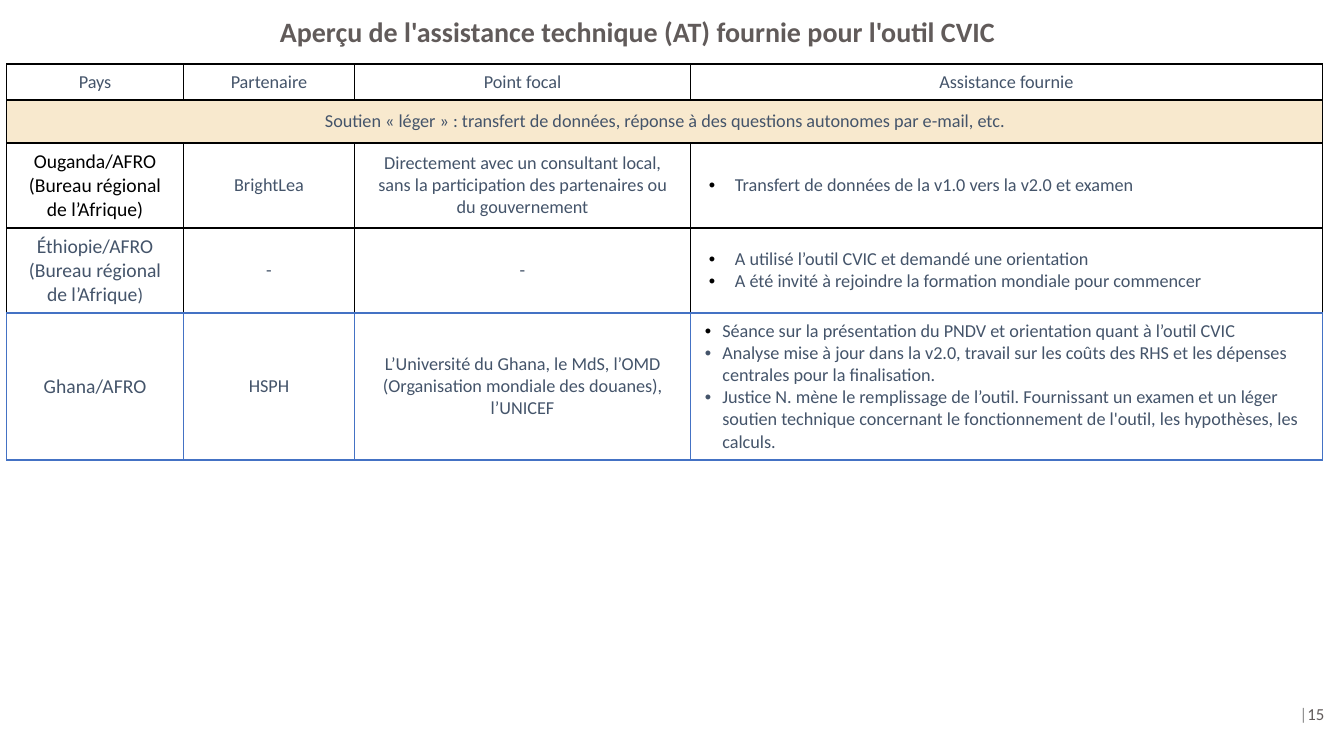
from lxml import etree
from pptx import Presentation
from pptx.dml.color import RGBColor
from pptx.enum.text import MSO_ANCHOR, PP_ALIGN
from pptx.oxml.ns import qn
from pptx.util import Pt

LEFT, MID, RIGHT = PP_ALIGN.LEFT, PP_ALIGN.CENTER, PP_ALIGN.RIGHT
MIDDLE = MSO_ANCHOR.MIDDLE
BLACK = RGBColor(0x00, 0x00, 0x00)
SLATE = RGBColor(0x44, 0x54, 0x6A)
BROWN = RGBColor(0x61, 0x5B, 0x5A)
GREY = RGBColor(0x8C, 0x8C, 0x8C)
BLUE = RGBColor(0x44, 0x72, 0xC4)
AMBER = RGBColor(0xDF, 0x93, 0x0A)

WIDTHS = [126, 122.4, 239.8, 451.4]
HEIGHTS = [25.7, 30.8, 60.7, 60.7, 105]
HEADS = ["Pays", "Partenaire", "Point focal", "Assistance fournie"]
BAND = ("Soutien « léger » : transfert de données, réponse à des questions "
        "autonomes par e-mail, etc.")
ROWS = [
    ["Ouganda/AFRO (Bureau régional de l’Afrique)", "BrightLea",
     "Directement avec un consultant local, sans la participation des "
     "partenaires ou du gouvernement",
     ["Transfert de données de la v1.0 vers la v2.0 et examen"]],
    ["Éthiopie/AFRO (Bureau régional de l’Afrique", "-", "-",
     ["A utilisé l’outil CVIC et demandé une orientation",
      "A été invité à rejoindre la formation mondiale pour commencer"]],
    ["Ghana/AFRO", "HSPH",
     "L’Université du Ghana, le MdS, l’OMD (Organisation mondiale des "
     "douanes), l’UNICEF",
     ["Séance sur la présentation du PNDV et orientation quant à l’outil CVIC",
      "Analyse mise à jour dans la v2.0, travail sur les coûts des RHS et les "
      "dépenses centrales pour la finalisation.",
      "Justice N. mène le remplissage de l’outil. Fournissant un examen et un "
      "léger soutien technique concernant le fonctionnement de l'outil, les "
      "hypothèses, les calculs."]],
]


class Deck:
    def __init__(self, font):
        self.font = font
        self.prs = Presentation()
        self.prs.slide_width, self.prs.slide_height = Pt(960), Pt(540)
        self.slide = self.prs.slides.add_slide(self.prs.slide_layouts[6])

    def style(self, run, size, color, bold=False):
        font = run.font
        font.name, font.size, font.bold = self.font, Pt(size), bold
        font.color.rgb = color

    def label(self, para, text, size, color, align=MID, bold=False):
        para.text = text
        para.alignment = align
        self.style(para.runs[0], size, color, bold)

    def extend(self, para, text, size, color):
        """Append a run in another style."""
        run = para.add_run()
        run.text = text
        self.style(run, size, color)

    def box(self, left, top, width, height, pad):
        """Add a text box and return its first paragraph."""
        shape = self.slide.shapes.add_textbox(
            Pt(left), Pt(top), Pt(width), Pt(height))
        frame = shape.text_frame
        frame.word_wrap, frame.vertical_anchor = True, MIDDLE
        frame.margin_left = frame.margin_right = Pt(9.4)
        frame.margin_top = frame.margin_bottom = Pt(pad)
        return frame.paragraphs[0]

    def bullet(self, para, color, left, hang):
        props = para._p.get_or_add_pPr()
        props.set("marL", str(Pt(left)))
        props.set("indent", str(-Pt(hang)))
        tint = etree.SubElement(props, qn("a:buClr"))
        etree.SubElement(tint, qn("a:srgbClr"), val=str(color))
        etree.SubElement(props, qn("a:buFont"), typeface="Arial")
        etree.SubElement(props, qn("a:buChar"), char="•")

    def border(self, cell, sides):
        """Draw cell borders from a map of side to (color, width)."""
        props = cell._tc.get_or_add_tcPr()
        for side, (color, width) in sides.items():
            line = etree.SubElement(props, qn("a:ln" + side), w=str(Pt(width)))
            fill = etree.SubElement(line, qn("a:solidFill"))
            etree.SubElement(fill, qn("a:srgbClr"), val=str(color))

    def tint(self, cell, color, alpha):
        """Fill a cell with a see-through color, alpha in percent."""
        cell.fill.solid()
        cell.fill.fore_color.rgb = color
        mark = cell._tc.tcPr.find(qn("a:solidFill"))[0]
        etree.SubElement(mark, qn("a:alpha"), val=str(alpha * 1000))

    def table(self, left, top, widths, heights):
        grid = self.slide.shapes.add_table(
            len(heights), len(widths), Pt(left), Pt(top),
            Pt(sum(widths)), Pt(sum(heights))).table
        grid.first_row = grid.horz_banding = False
        for col, width in zip(grid.columns, widths):
            col.width = Pt(width)
        for row, height in zip(grid.rows, heights):
            row.height = Pt(height)
        for cell in grid.iter_cells():
            cell.vertical_anchor = MIDDLE
            cell.margin_left = cell.margin_right = Pt(9.4)
            cell.margin_top = cell.margin_bottom = Pt(4.7)
        return grid


def main():
    deck = Deck("Calibri")
    title = deck.box(165.6, 0, 579.6, 45.4, 4.7)
    deck.label(title, "Aperçu de l'assistance technique (AT) fournie pour "
               "l'outil CVIC", 20, BROWN, bold=True)

    grid = deck.table(4.9, 45.7, WIDTHS, HEIGHTS)
    last = len(HEIGHTS) - 1
    for row in range(len(HEIGHTS)):
        side = BLUE if row == last else BLACK
        base = BLUE if row >= last - 1 else BLACK
        for col in range(len(WIDTHS)):
            cell = grid.cell(row, col)
            deck.border(cell, {
                "L": (side, 1), "R": (side, 1), "T": (side, 1),
                "B": (base, 2 if row == last else 1)})
            cell.fill.background()

    for col, head in enumerate(HEADS):
        deck.label(grid.cell(0, col).text_frame.paragraphs[0], head, 13, SLATE)
    band = grid.cell(1, 0)
    band.merge(grid.cell(1, len(WIDTHS) - 1))
    deck.label(band.text_frame.paragraphs[0], BAND, 13, SLATE)
    deck.tint(band, AMBER, 20)

    for row, (land, *mids, aids) in enumerate(ROWS, 2):
        para = grid.cell(row, 0).text_frame.paragraphs[0]
        deck.label(para, land, 14, BLACK if row == 2 else SLATE)
        if row == 3:
            deck.extend(para, ")", 13, SLATE)
        for col, text in enumerate(mids, 1):
            para = grid.cell(row, col).text_frame.paragraphs[0]
            deck.label(para, text, 13, SLATE)
        body = grid.cell(row, 3).text_frame
        left, hang = (13.5, 12.4) if row == last else (22.5, 18.7)
        for num, text in enumerate(aids):
            para = body.add_paragraph() if num else body.paragraphs[0]
            deck.label(para, text, 13, SLATE, LEFT)
            dot = SLATE if num and row == last else BLACK
            deck.bullet(para, dot, left, hang)

    page = deck.box(897.8, 489.6, 57.6, 41, 9.4)
    deck.label(page, "|", 12, GREY, RIGHT)
    deck.extend(page, "15", 12, BROWN)
    deck.prs.save("out.pptx")


if __name__ == "__main__":
    main()
